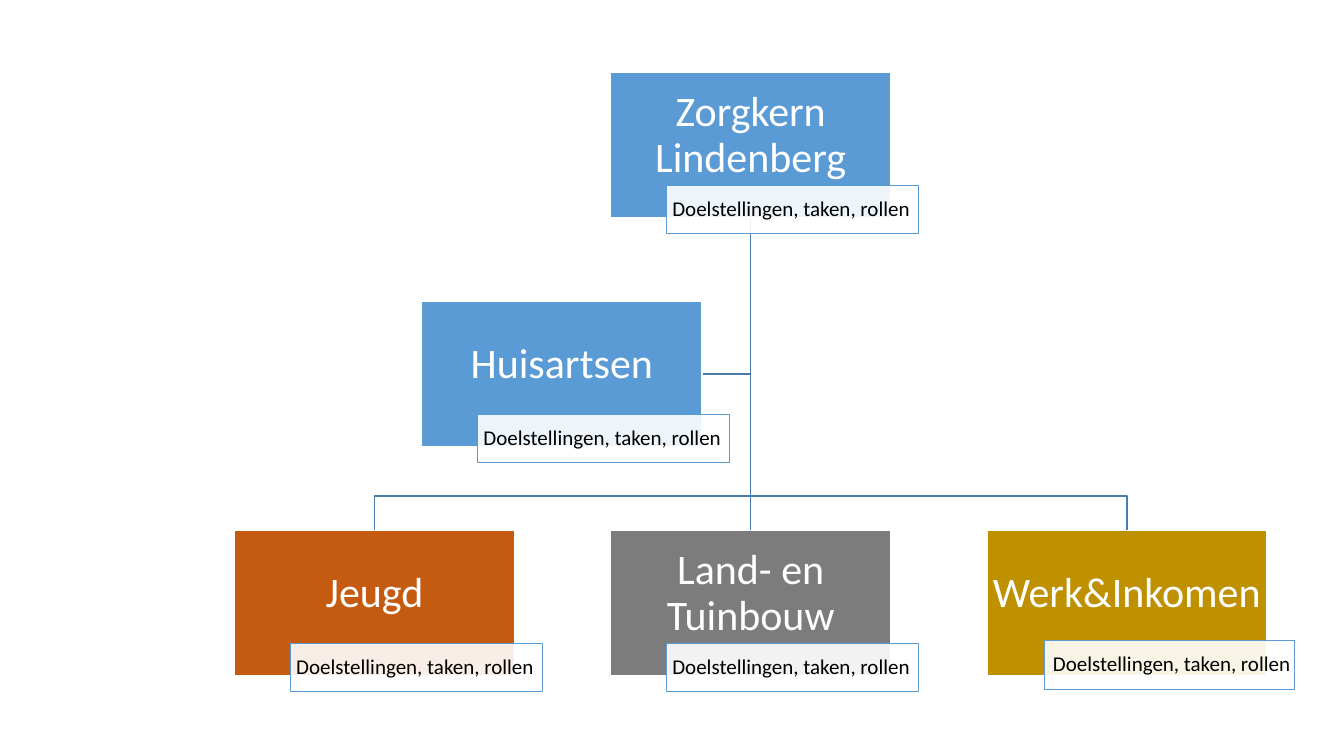
from lxml import etree
from pptx import Presentation
from pptx.dml.color import RGBColor
from pptx.enum.shapes import MSO_CONNECTOR, MSO_SHAPE
from pptx.enum.text import MSO_ANCHOR, PP_ALIGN
from pptx.oxml.ns import qn
from pptx.util import Cm, Pt

RECTANGLE = MSO_SHAPE.RECTANGLE
STRAIGHT = MSO_CONNECTOR.STRAIGHT
MIDDLE = MSO_ANCHOR.MIDDLE
CENTER = PP_ALIGN.CENTER
RIGHT = PP_ALIGN.RIGHT

WHITE = RGBColor(0xFF, 0xFF, 0xFF)
BLACK = RGBColor(0x00, 0x00, 0x00)
BLUE = RGBColor(0x5B, 0x9B, 0xD5)
LINE_BLUE = RGBColor(0x49, 0x7C, 0xAB)
ORANGE = RGBColor(0xC5, 0x5A, 0x11)
GRAY = RGBColor(0x7C, 0x7C, 0x7C)
GOLD = RGBColor(0xBF, 0x90, 0x00)

FONT = "Calibri"
LABEL = "Doelstellingen, taken, rollen "
BOX_WIDTH, BOX_HEIGHT = Cm(7.06), Cm(3.66)
LABEL_BOX = (Cm(1.41), Cm(2.84), Cm(6.35), Cm(1.22))
LAST_LABEL_BOX = (Cm(1.45), Cm(2.77), Cm(6.3), Cm(1.24))
BUS_GAP = Cm(0.87)

TITLE_FRAME = {"margin_left": Cm(0.05), "margin_top": Cm(0.05),
               "margin_right": Cm(0.05), "margin_bottom": Cm(0.51),
               "vertical_anchor": MIDDLE, "word_wrap": True}
LABEL_FRAME = {"margin_left": Cm(0.1), "margin_top": Cm(0.03),
               "margin_right": Cm(0.1), "margin_bottom": Cm(0.03),
               "vertical_anchor": MIDDLE, "word_wrap": True}


def set_attributes(target, values):
    for name, value in values.items():
        setattr(target, name, value)


def style_line(line, color):
    line.color.rgb = color
    line.width = Pt(1)


def add_text_box(slide, box, text, fill, outline, frame_format, alignment, size, color):
    shape = slide.shapes.add_shape(RECTANGLE, *box)
    shape.shadow.inherit = False
    shape.fill.solid()
    shape.fill.fore_color.rgb = fill
    style_line(shape.line, outline)
    set_attributes(shape.text_frame, frame_format)
    paragraph = shape.text_frame.paragraphs[0]
    set_attributes(paragraph, {"alignment": alignment, "line_spacing": 0.9})
    run = paragraph.add_run()
    run.text = text
    set_attributes(run.font, {"name": FONT, "size": Pt(size)})
    run.font.color.rgb = color
    return shape


def add_unit(slide, left, top, title, fill, label_box=LABEL_BOX):
    add_text_box(slide, (left, top, BOX_WIDTH, BOX_HEIGHT), title, fill, WHITE,
                 TITLE_FRAME, CENTER, 30, WHITE)
    offset_x, offset_y, width, height = label_box
    label = add_text_box(slide, (left + offset_x, top + offset_y, width, height), LABEL,
                         WHITE, BLUE, LABEL_FRAME, RIGHT, 15, BLACK)
    color = label._element.spPr.find(qn("a:solidFill"))[0]
    etree.SubElement(color, qn("a:alpha"), val="90000")


def add_bent_line(slide, points):
    builder = slide.shapes.build_freeform(*points[0])
    builder.add_line_segments(points[1:], close=False)
    shape = builder.convert_to_shape()
    shape.shadow.inherit = False
    shape.fill.background()
    style_line(shape.line, LINE_BLUE)


def add_straight_line(slide, start, end):
    connector = slide.shapes.add_connector(STRAIGHT, *start, *end)
    style_line(connector.line, LINE_BLUE)
    etree.SubElement(connector._element.spPr, qn("a:effectLst"))


def add_organisation_chart(slide, left, top):
    column_step, row_step = Cm(9.48), Cm(5.77)
    middle_left = left + column_step
    center = middle_left + BOX_WIDTH // 2
    trunk_top = top + BOX_HEIGHT
    assistant_left, assistant_top = left + Cm(4.72), top + row_step
    children_top = top + 2 * row_step
    bus = children_top - BUS_GAP

    assistant_middle = assistant_top + BOX_HEIGHT // 2
    add_bent_line(slide, [(center, trunk_top), (center, assistant_middle),
                          (assistant_left + BOX_WIDTH, assistant_middle)])
    for end in (center + column_step, center - column_step):
        add_bent_line(slide, [(center, trunk_top), (center, bus), (end, bus),
                              (end, children_top)])
    add_straight_line(slide, (center, trunk_top), (center, children_top))

    add_unit(slide, middle_left, top, "Zorgkern Lindenberg", BLUE)
    children = [("Jeugd", ORANGE, LABEL_BOX), ("Land- en Tuinbouw", GRAY, LABEL_BOX),
                ("Werk&Inkomen", GOLD, LAST_LABEL_BOX)]
    for index, (title, fill, label_box) in enumerate(children):
        add_unit(slide, left + index * column_step, children_top, title, fill, label_box)
    add_unit(slide, assistant_left, assistant_top, "Huisartsen", BLUE)


def main():
    presentation = Presentation()
    set_attributes(presentation, {"slide_width": Cm(33.87), "slide_height": Cm(19.05)})
    slide = presentation.slides.add_slide(presentation.slide_layouts[6])
    add_organisation_chart(slide, Cm(5.91), Cm(1.83))
    presentation.save("out.pptx")


if __name__ == "__main__":
    main()
